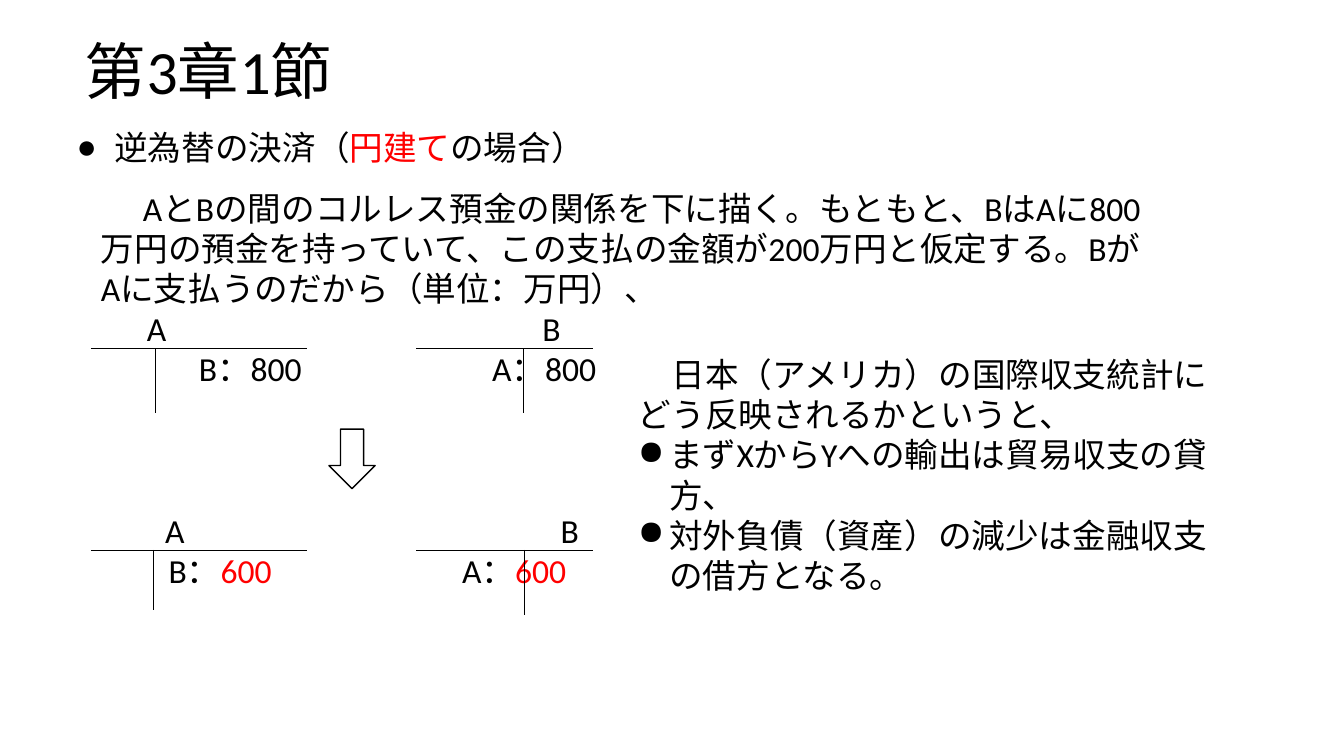
from lxml import etree
from pptx import Presentation
from pptx.dml.color import RGBColor
from pptx.enum.shapes import MSO_CONNECTOR, MSO_SHAPE
from pptx.enum.text import MSO_ANCHOR, MSO_AUTO_SIZE, PP_ALIGN
from pptx.oxml.ns import qn
from pptx.util import Pt

LINE = MSO_CONNECTOR.STRAIGHT
ARROW = MSO_SHAPE.DOWN_ARROW
TOP, MIDDLE = MSO_ANCHOR.TOP, MSO_ANCHOR.MIDDLE
NO_FIT = MSO_AUTO_SIZE.NONE
LEFT = PP_ALIGN.LEFT
FONT = "Calibri"
BLACK, RED = "000000", "FF0000"
ROW = 28.8


def color(code):
    return RGBColor.from_string(code)


def place(shape, box):
    shape.left, shape.top, shape.width, shape.height = map(Pt, box)


def write(para, runs, size=24, margin=0, indent=0, bullet=False):
    """Fill a paragraph with (text, colour) runs; a plain string is black."""
    para.alignment = LEFT
    para.font.name, para.font.size = FONT, Pt(size)
    for text, code in [(runs, BLACK)] if isinstance(runs, str) else runs:
        run = para.add_run()
        run.text = text
        run.font.color.rgb = color(code)
    props = para._p.get_or_add_pPr()
    props.set("marL", str(Pt(margin)))
    props.set("indent", str(Pt(indent)))
    mark = etree.Element(qn("a:buChar" if bullet else "a:buNone"))
    if bullet:
        mark.set("char", "●")
    props.insert_element_before(mark, "a:tabLst", "a:defRPr", "a:extLst")


def add_text(slide, box, paras, inset=True):
    """Add a text box; paras holds (runs, options for write)."""
    shape = slide.shapes.add_textbox(*map(Pt, box))
    frame = shape.text_frame
    frame.word_wrap = True
    if not inset:
        frame.margin_left = frame.margin_right = 0
        frame.margin_top = frame.margin_bottom = 0
    for i, (runs, opts) in enumerate(paras):
        para = frame.add_paragraph() if i else frame.paragraphs[0]
        write(para, runs, **opts)


def fill_holder(holder, box, anchor, runs, **opts):
    place(holder, box)
    frame = holder.text_frame
    frame.auto_size = NO_FIT
    frame.vertical_anchor = anchor
    para = frame.paragraphs[0]
    write(para, runs, **opts)
    para.line_spacing = 0.9


def add_line(slide, x1, y1, x2, y2):
    line = slide.shapes.add_connector(LINE, *map(Pt, (x1, y1, x2, y2)))
    line.line.color.rgb = color(BLACK)
    line.line.width = Pt(0.5)
    etree.SubElement(line._element.spPr, qn("a:effectLst"))


def add_account(slide, box, stem, name, name_x, entry, entry_x):
    """Draw a T-account; stem, name_x and entry_x are offsets from its left."""
    left, top, width, height = box
    rule = top + ROW
    add_text(slide, (left + name_x, top, 30, ROW), [(name, {})], False)
    add_text(slide, (left + entry_x, rule, 110, ROW), [(entry, {})], False)
    add_line(slide, left, rule, left + width, rule)
    add_line(slide, left + stem, rule, left + stem, top + height)


def add_arrow(slide, box):
    arrow = slide.shapes.add_shape(ARROW, *map(Pt, box))
    arrow.shadow.inherit = False
    arrow.fill.background()
    arrow.line.color.rgb = color(BLACK)
    arrow.line.width = Pt(1)


def add_accounts(slide, left, top):
    """Draw the accounts before the payment, an arrow, and those after it."""
    right, after = left + 232.5, top + 5 * ROW
    wide, slim, tall = 154, 126, 75
    add_account(slide, (left, top, wide, tall), 46, "A", 40, "B：800", 77)
    add_account(slide, (right, top, slim, tall), 76.5, "B", 90, "A：800", 54)
    add_arrow(slide, (left + 170, top + 86.5, 33, 42.5))
    add_account(slide, (left, after, wide, 72), 44.5, "A", 53,
                [("B：", BLACK), ("600", RED)], 55.5)
    add_account(slide, (right, after, slim, tall), 77, "B", 103,
                [("A：", BLACK), ("600", RED)], 32.5)


def add_notes(slide, box):
    item = {"margin": 22.5, "indent": -22.5, "bullet": True}
    add_text(slide, box, [
        ("日本（アメリカ）の国際収支統計にどう反映されるかというと、", {"indent": 24}),
        ("まずXからYへの輸出は貿易収支の貸方、", item),
        ("対外負債（資産）の減少は金融収支の借方となる。", item),
    ])


def main():
    deck = Presentation()
    deck.slide_width, deck.slide_height = Pt(960), Pt(540)
    slide = deck.slides.add_slide(deck.slide_layouts[1])
    title, body = slide.placeholders
    fill_holder(title, (53.5, 24.5, 836.5, 57), MIDDLE, "第3章1節", size=44)
    fill_holder(body, (47.5, 90, 842.5, 38), TOP,
                [("逆為替の決済（", BLACK), ("円建て", RED), ("の場合）", BLACK)],
                margin=27, indent=-27, bullet=True)
    add_text(slide, (65, 130.5, 767, 94), [(
        "AとBの間のコルレス預金の関係を下に描く。もともと、BはAに"
        "800万円の預金を持っていて、この支払の金額が200万円と仮定する。"
        "BがAに支払うのだから（単位：万円）、", {"indent": 30})])
    add_accounts(slide, 65, 220)
    add_notes(slide, (448.5, 249, 422.5, 181.5))
    deck.save("out.pptx")


if __name__ == "__main__":
    main()
